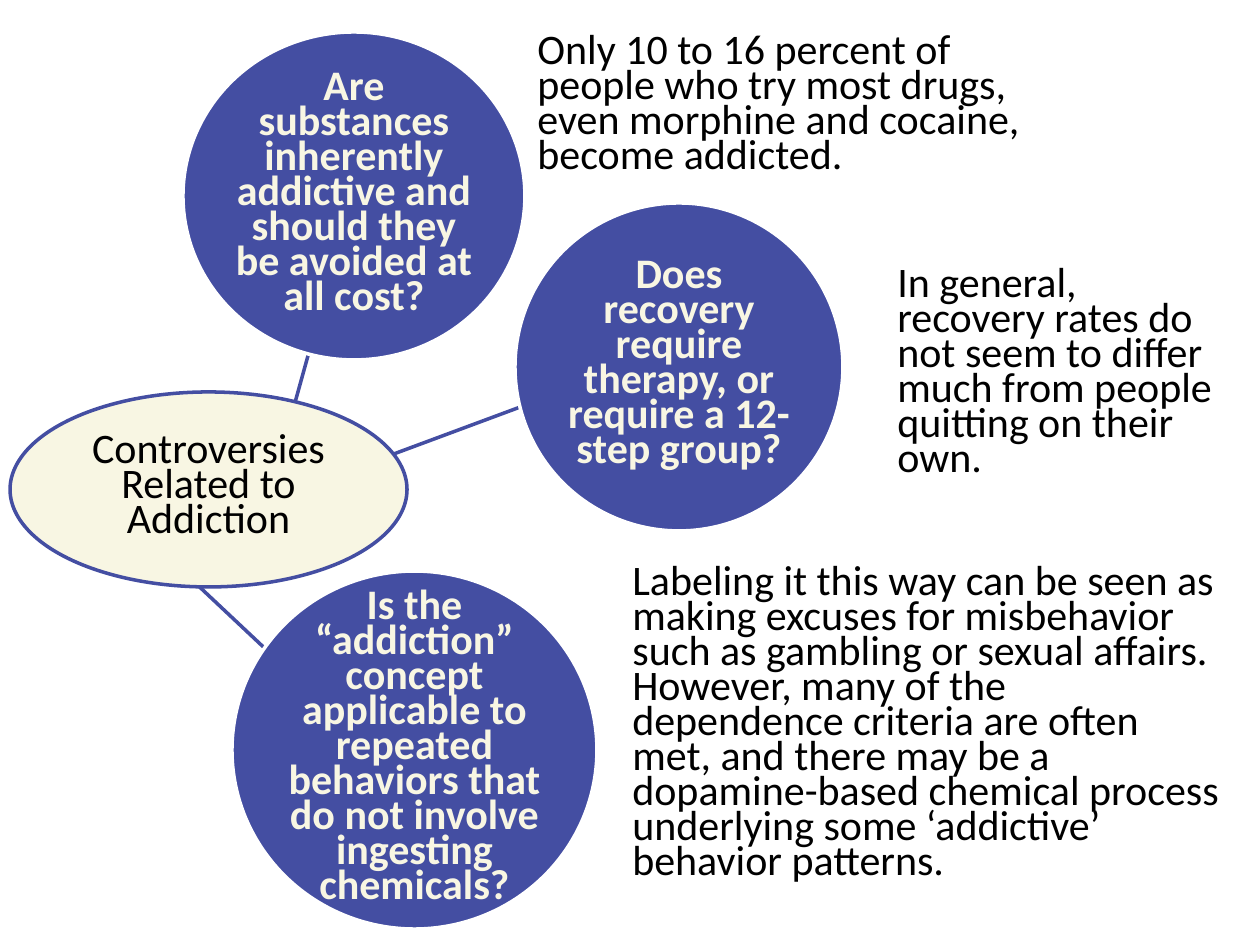
"""Build a slide of three controversies about addiction around a central oval."""
from lxml.etree import SubElement
from pptx import Presentation
from pptx.dml.color import RGBColor
from pptx.enum.shapes import MSO_CONNECTOR, MSO_SHAPE
from pptx.enum.text import MSO_ANCHOR, MSO_AUTO_SIZE, PP_ALIGN
from pptx.oxml.ns import qn
from pptx.util import Pt

PX = 914400 / 126
COLORS = {"blue": "444EA2", "cream": "F8F6E3", "white": "FFFFFF", "black": "000000"}
HUB = ("Controversies Related to Addiction", (10, 392, 397, 195))
CONTROVERSIES = [
    {
        "question": "Are substances inherently addictive and should they be avoided at all cost?",
        "circle": (183, 32, 342, 328),
        "spoke": (291, 417, 311, 345),
        "answer": "Only 10 to 16 percent of people who try most drugs, even morphine and cocaine, "
                  "become addicted.",
        "answer_box": (525, 32, 548, 156),
        "indent": 0,
    },
    {
        "question": "Does recovery require therapy, or require a 12-step group?",
        "circle": (515, 203, 328, 328),
        "spoke": (391, 455, 523, 406),
        "answer": "In general, recovery rates do not seem to differ much from people quitting "
                  "on their own.",
        "answer_box": (885, 265, 354, 227),
        "indent": 0,
    },
    {
        "question": "Is the “addiction” concept applicable to repeated behaviors that do not "
                    "involve ingesting chemicals?",
        "circle": (232, 571, 365, 358),
        "spoke": (173, 562, 273, 656),
        "answer": "Labeling it this way can be seen as making excuses for misbehavior such as "
                  "gambling or sexual affairs. However, many of the dependence criteria are "
                  "often met, and there may be a dopamine-based chemical process underlying "
                  "some ‘addictive’ behavior patterns.",
        "answer_box": (581, 563, 658, 333),
        "indent": 39,
    },
]


def emu(*lengths):
    return [round(length * PX) for length in lengths]


def rgb(name):
    return RGBColor.from_string(COLORS[name])


def apply(target, values):
    for name, value in values.items():
        setattr(target, name, value)


def write(frame, text, color, bold, align):
    paragraph = frame.paragraphs[0]
    apply(paragraph, {"alignment": align, "line_spacing": Pt(20)})
    run = paragraph.add_run()
    run.text = text
    apply(run.font, {"name": "Calibri", "size": Pt(24), "bold": bold})
    run.font.color.rgb = rgb(color)
    return paragraph


def style_line(line, color):
    line.color.rgb = rgb(color)
    line.width = Pt(2)


def add_oval(slide, text, box, fill, outline, color, bold, inset):
    oval = slide.shapes.add_shape(MSO_SHAPE.OVAL, *emu(*box))
    oval.shadow.inherit = False
    oval.fill.solid()
    oval.fill.fore_color.rgb = rgb(fill)
    style_line(oval.line, outline)
    margin = emu(inset)[0]
    sides = ("left", "right", "top", "bottom")
    apply(oval.text_frame, {f"margin_{side}": margin for side in sides})
    apply(oval.text_frame, {"word_wrap": True, "vertical_anchor": MSO_ANCHOR.MIDDLE})
    write(oval.text_frame, text, color, bold, PP_ALIGN.CENTER)


def add_spoke(slide, ends):
    spoke = slide.shapes.add_connector(MSO_CONNECTOR.STRAIGHT, *emu(*ends))
    style_line(spoke.line, "blue")
    SubElement(spoke._element.spPr, qn("a:effectLst"))


def add_answer(slide, text, box, indent):
    frame = slide.shapes.add_textbox(*emu(*box)).text_frame
    apply(frame, {"word_wrap": True, "auto_size": MSO_AUTO_SIZE.SHAPE_TO_FIT_TEXT})
    paragraph = write(frame, text, "black", False, PP_ALIGN.LEFT)
    if indent:
        paragraph._p.get_or_add_pPr().set("marL", str(emu(indent)[0]))


def main():
    deck = Presentation()
    apply(deck, dict(zip(("slide_width", "slide_height"), emu(1260, 945))))
    slide = deck.slides.add_slide(deck.slide_layouts[6])
    for item in CONTROVERSIES:
        add_spoke(slide, item["spoke"])
        add_oval(slide, item["question"], item["circle"], "blue", "white", "cream", True, 0)
    add_oval(slide, *HUB, "cream", "blue", "black", False, 16)
    for item in CONTROVERSIES:
        add_answer(slide, item["answer"], item["answer_box"], item["indent"])
    deck.save("out.pptx")


if __name__ == "__main__":
    main()
